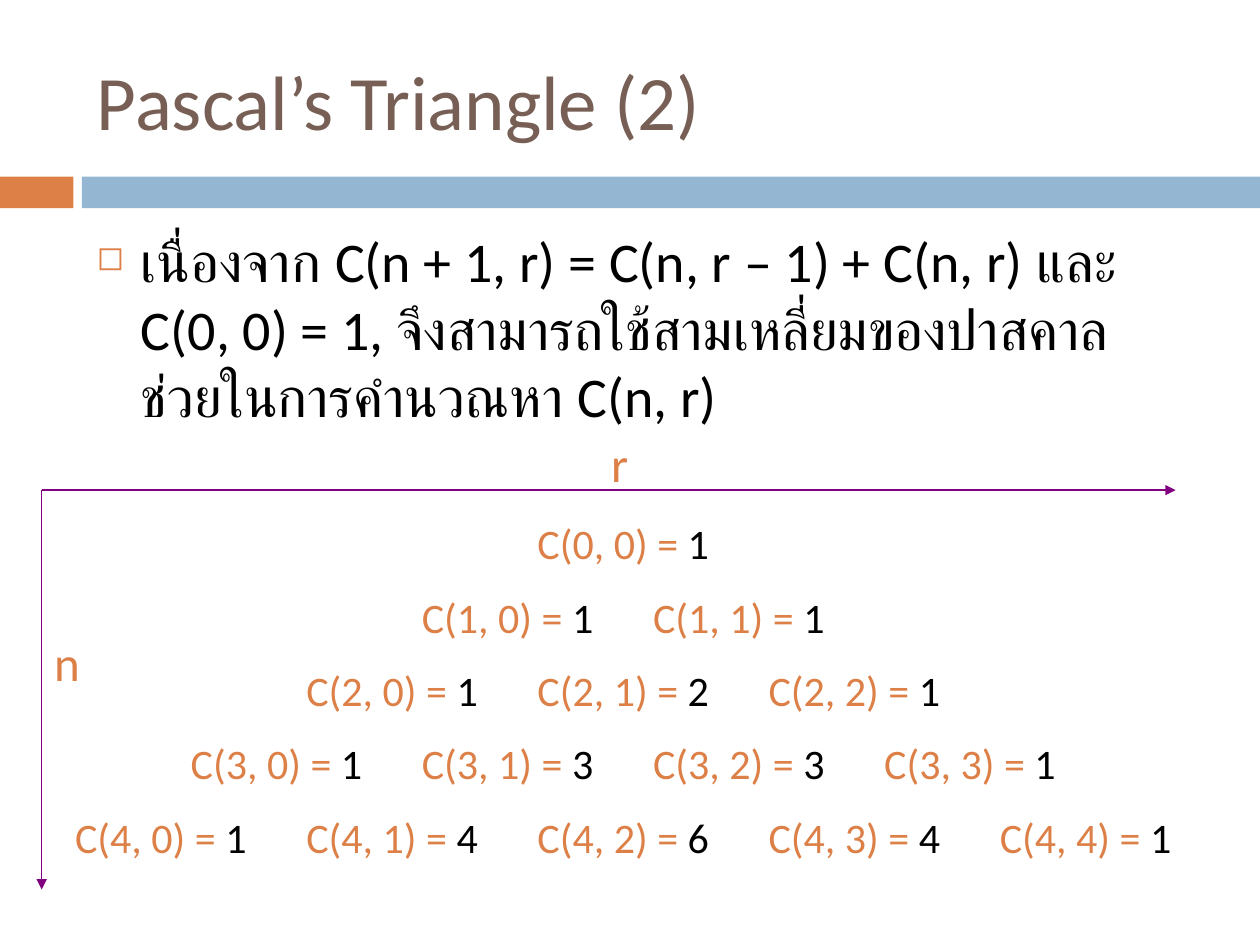
from math import comb
from lxml.etree import SubElement
from pptx import Presentation
from pptx.dml.color import RGBColor as Rgb
from pptx.enum.shapes import MSO_CONNECTOR as Link, MSO_SHAPE as Kind
from pptx.enum.text import MSO_ANCHOR as Anchor, MSO_AUTO_SIZE as Fit, PP_ALIGN as Align
from pptx.oxml.ns import qn
from pptx.util import Cm, Pt

ORANGE = Rgb(0xDD, 0x80, 0x47)
BLUE = Rgb(0x94, 0xB6, 0xD2)
BROWN = Rgb(0x77, 0x5F, 0x55)
PURPLE = Rgb(0x80, 0x00, 0x80)
BLACK = Rgb(0, 0, 0)
FONT = "Calibri"


def add_run(para, text, size, color):
    """Append one formatted run to a paragraph."""
    run = para.add_run()
    run.text = text
    run.font.name = FONT
    run.font.size = Pt(size)
    run.font.color.rgb = color


def add_box(slide, left, top, width, height, fit=Fit.SHAPE_TO_FIT_TEXT):
    """Add a wrapping text box and return its first paragraph."""
    box = slide.shapes.add_textbox(Cm(left), Cm(top), Cm(width), Cm(height))
    frame = box.text_frame
    frame.word_wrap = True
    frame.auto_size = fit
    return frame.paragraphs[0]


def add_title(slide, left, top, width, height):
    """Place and fill the title placeholder."""
    title = slide.shapes.title
    title.left, title.top = Cm(left), Cm(top)
    title.width, title.height = Cm(width), Cm(height)
    frame = title.text_frame
    frame.vertical_anchor = Anchor.MIDDLE
    para = frame.paragraphs[0]
    para.alignment = Align.LEFT
    add_run(para, "Pascal’s Triangle (2)", 44, BROWN)


def add_band(slide, left, top, width, height):
    """Draw the two-colour band under the title."""
    tab, gap = 1.48, 0.17
    rest = tab + gap
    for start, span, color in ((0, tab, ORANGE), (rest, width - rest, BLUE)):
        bar = slide.shapes.add_shape(
            Kind.RECTANGLE, Cm(left + start), Cm(top), Cm(span), Cm(height))
        bar.shadow.inherit = False
        bar.fill.solid()
        bar.fill.fore_color.rgb = color
        bar.line.fill.background()


def add_body(slide, left, top, width, height):
    """Write the bulleted statement of the rule."""
    para = add_box(slide, left, top, width, height, Fit.NONE)
    para.space_before = Pt(7)
    props = para._p.get_or_add_pPr()
    props.set("marL", str(Cm(0.89)))
    props.set("indent", str(-Cm(0.89)))
    tint = SubElement(props, qn("a:buClr"))
    SubElement(tint, qn("a:srgbClr"), val=str(ORANGE))
    SubElement(props, qn("a:buSzPct"), val="60000")
    SubElement(props, qn("a:buChar"), char="◻")
    add_run(para, "เนื่องจาก C(n + 1, r) = C(n, r – 1) + C(n, r) และ", 32, BLACK)
    para.add_line_break()
    add_run(para, "C(0, 0) = 1, จึงสามารถใช้สามเหลี่ยมของปาสคาล ช่วยในการคำนวณหา C(n, r)",
            32, BLACK)


def add_pyramid(slide, left, top, width, rows):
    """Lay out centred rows of binomial coefficients."""
    cell, high, step, drop = 5.29, 1.27, 4.66, 1.48
    apex = left + (width - cell) / 2
    for n in range(rows):
        for r in range(n + 1):
            para = add_box(slide, apex + (r - n / 2) * step, top + n * drop, cell, high)
            add_run(para, f"C({n}, {r}) = ", 24, ORANGE)
            add_run(para, str(comb(n, r)), 24, BLACK)


def add_axes(slide, left, top, width, height):
    """Draw the n and r arrows from one corner, with their labels."""
    for wide, high in ((0, height), (width, 0)):
        arrow = slide.shapes.add_connector(
            Link.STRAIGHT, Cm(left), Cm(top), Cm(left + wide), Cm(top + high))
        arrow.line.color.rgb = PURPLE
        arrow.line.width = Pt(0.75)
        SubElement(arrow.line._get_or_add_ln(), qn("a:tailEnd"), type="triangle")
        SubElement(arrow._element.spPr, qn("a:effectLst"))
    for name, over, down in (("r", 11.23, -1.27), ("n", 0, 2.74)):
        para = add_box(slide, left + over, top + down, 1.91, 1.45)
        add_run(para, name, 28, ORANGE)


def main():
    """Build and save the slide."""
    deck = Presentation()
    deck.slide_width, deck.slide_height = Cm(25.4), Cm(19.05)
    slide = deck.slides.add_slide(deck.slide_layouts[5])
    add_band(slide, 0, 3.56, 25.4, 0.64)
    add_title(slide, 1.7, 0.64, 22.65, 2.75)
    add_body(slide, 1.7, 4.45, 22.65, 12.5)
    add_pyramid(slide, 1.27, 10.31, 23.92, 5)
    add_axes(slide, 0.84, 9.88, 22.86, 8.05)
    deck.save("out.pptx")


if __name__ == "__main__":
    main()
